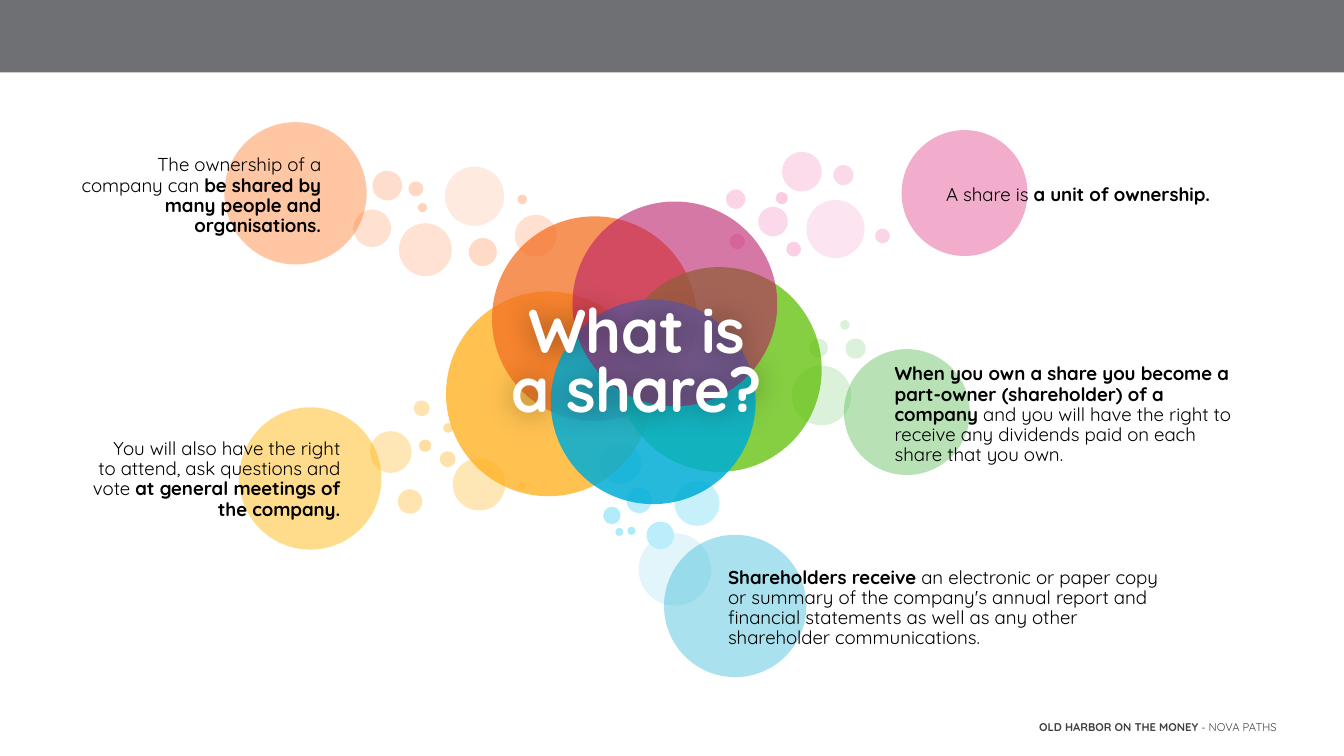
"""Build the "What is a share?" slide with five bubble clusters around a title."""
from lxml import etree
from pptx import Presentation
from pptx.dml.color import RGBColor
from pptx.enum.shapes import MSO_SHAPE
from pptx.enum.text import MSO_ANCHOR, MSO_AUTO_SIZE, PP_ALIGN
from pptx.oxml.ns import qn
from pptx.util import Cm, Pt

OVAL, RECT = MSO_SHAPE.OVAL, MSO_SHAPE.RECTANGLE
TOP, MIDDLE = MSO_ANCHOR.TOP, MSO_ANCHOR.MIDDLE
LEFT, CENTER, RIGHT = PP_ALIGN.LEFT, PP_ALIGN.CENTER, PP_ALIGN.RIGHT
NO_FIT = MSO_AUTO_SIZE.NONE
FONT = "Quicksand"
COLORS = {
    "black": "000000", "white": "FFFFFF", "header": "6F7074", "footer": "404040",
    "yellow": "FFB300", "yellow1": "FFE7B5", "yellow2": "FFE4B0",
    "yellow3": "FFE2AB", "yellow4": "FFDEA1",
    "green": "4FB848", "green1": "DCF1DA",
    "orange": "FF6200", "orange1": "FFEAE0", "orange2": "FFE2D4", "orange3": "FFE0D1",
    "orange4": "FFDDCC", "orange5": "FFDAC7", "orange6": "FFD7C2", "orange7": "FFD2BA",
    "pink": "DE337D", "pink1": "FCE5F0", "pink2": "FCDBEB", "pink3": "FCD9EA",
    "pink4": "FCD4E7", "pink5": "FCCFE4", "pink6": "FCCCE2",
    "blue": "2BB5D6", "blue1": "E1F5FA", "blue2": "C8F0FA", "blue3": "C6F0FA",
    "blue4": "BBEEFA", "blue5": "B2ECFA", "blue6": "ACEBFA",
    "core_yellow": "FFAE17", "core_orange": "F36F21", "core_green": "5CBF00",
    "core_blue": "00ADD6", "core_pink": "B81866",
}


def add_filled(shapes, kind, x, y, w, h, color, alpha=100):
    sp = shapes.add_shape(kind, Cm(x), Cm(y), Cm(w), Cm(h))
    sp.shadow.inherit = False
    sp.line.fill.background()
    sp.fill.solid()
    sp.fill.fore_color.rgb = RGBColor.from_string(COLORS[color])
    if alpha < 100:
        clr = sp.fill._xPr.find(".//" + qn("a:srgbClr"))
        etree.SubElement(clr, qn("a:alpha"), val=str(alpha * 1000))


def format_text(sp, lines, size=10, color="black", align=LEFT, anchor=TOP, spacing=0.9):
    tf = sp.text_frame
    tf.word_wrap = True
    tf.auto_size = NO_FIT
    tf.vertical_anchor = anchor
    for i, runs in enumerate(lines):
        p = tf.add_paragraph() if i else tf.paragraphs[0]
        p.alignment = align
        p.line_spacing = spacing
        p.space_before = Pt(0)
        for text, bold in runs:
            r = p.add_run()
            r.text = text
            r.font.name = FONT
            r.font.size = Pt(size)
            r.font.bold = bold
            r.font.color.rgb = RGBColor.from_string(COLORS[color])


prs = Presentation()
prs.slide_width, prs.slide_height = Cm(25.4), Cm(14.29)
s = prs.slides.add_slide(prs.slide_layouts[5])

footer = s.shapes.add_textbox(Cm(10.72), Cm(13.49), Cm(13.41), Cm(0.51))
footer.text_frame.margin_left = footer.text_frame.margin_right = 0
format_text(footer, [[("OLD HARBOR ON THE MONEY ", True), ("- NOVA PATHS", False)]],
            size=6, color="footer", align=RIGHT, spacing=1.0)
add_filled(s.shapes, RECT, 0, 0, 25.4, 1.37, "header")

clusters = [
    {"bubbles": [
        (6.99, 8.15, 0.79, "yellow1"), (7.52, 9.25, 0.46, "yellow2"),
        (8.31, 8.53, 0.3, "yellow3"), (7.92, 8.31, 0.23, "yellow4"),
        (7.82, 7.57, 0.3, "yellow2"), (8.38, 8, 0.18, "yellow4"),
        (9.8, 9.12, 0.13, "yellow4"), (8.56, 8.66, 0.99, "yellow1")],
     "circle": (4.52, 7.7, 2.69, "yellow", 45),
     "box": (1.5, 8.18, 5.18, 1.04), "align": RIGHT, "anchor": TOP,
     "runs": [("You will also have the right to attend, ask questions and vote ", False),
              ("at general meetings of the company.", True)]},
    {"bubbles": [
        (15.29, 6.4, 0.36, "green1"), (15.88, 6.05, 0.18, "green1"),
        (15.98, 6.4, 0.38, "green1"), (14.96, 6.91, 1.13, "green1")],
     "circle": (15.95, 6.6, 2.38, "green", 40),
     "box": (16.66, 7.09, 6.91, 1.52), "align": LEFT, "anchor": MIDDLE,
     "runs": [("When you own a share you become a part-owner (shareholder) of a company ", True),
              ("and you will have the right to receive any dividends paid on each "
               "share that you own.", False)]},
    {"bubbles": [
        (9.73, 4.06, 0.79, "orange3"), (8.41, 3.15, 1.12, "orange1"),
        (7.54, 4.22, 1, "orange2"), (8.86, 4.5, 0.53, "orange5"),
        (6.68, 3.96, 0.71, "orange3"), (7.04, 3.23, 0.56, "orange4"),
        (7.72, 3.43, 0.28, "orange6"), (7.9, 3.84, 0.17, "orange7"),
        (9.78, 3.68, 0.18, "orange7")],
     "circle": (4.24, 2.31, 2.69, "orange", 36),
     "box": (1.14, 2.82, 5.18, 1.04), "align": RIGHT, "anchor": TOP,
     "runs": [("The ownership of a company can ", False),
              ("be shared by many people and organisations.", True)]},
    {"bubbles": [
        (14.78, 2.87, 0.75, "pink2"), (14.33, 3.91, 0.56, "pink3"),
        (13.79, 4.42, 0.29, "pink5"), (14.66, 3.63, 0.23, "pink6"),
        (13.72, 3.58, 0.37, "pink4"), (15.75, 3.12, 0.38, "pink3"),
        (14.86, 4.57, 0.28, "pink5"), (16.54, 4.32, 0.28, "pink4"),
        (15.24, 3.78, 1.1, "pink1")],
     "circle": (17.04, 2.46, 2.38, "pink", 40),
     "box": (17.63, 3.38, 6.4, 1.04), "align": LEFT, "anchor": TOP,
     "runs": [("A share is ", False), ("a unit of ownership.", True)]},
    {"bubbles": [
        (12.75, 9.09, 0.85, "blue3"), (12.07, 10.08, 1.37, "blue1"),
        (11.33, 8.36, 0.79, "blue2"), (11.84, 9.22, 0.48, "blue4"),
        (12.22, 9.86, 0.52, "blue4"), (11.4, 9.58, 0.33, "blue5"),
        (11.86, 9.96, 0.15, "blue6"), (11.63, 9.98, 0.15, "blue6")],
     "circle": (12.55, 10.11, 2.69, "blue", 40),
     "box": (13.51, 10.74, 8.89, 1.52), "align": LEFT, "anchor": MIDDLE,
     "runs": [("Shareholders receive ", True),
              ("an electronic or paper copy or summary of the company's annual report and "
               "financial statements as well as any other shareholder communications.", False)]},
]
for cluster in clusters:
    group = s.shapes.add_group_shape()
    for x, y, d, color in cluster["bubbles"]:
        add_filled(group.shapes, OVAL, x, y, d, d, color)
    x, y, d, color, alpha = cluster["circle"]
    add_filled(group.shapes, OVAL, x, y, d, d, color, alpha)
    sp = group.shapes.add_textbox(*[Cm(v) for v in cluster["box"]])
    format_text(sp, [cluster["runs"]], align=cluster["align"], anchor=cluster["anchor"])

for x, y, color, alpha in [
    (8.43, 5.51, "core_yellow", 75), (9.3, 4.09, "core_orange", 75),
    (11.66, 5.05, "core_green", 74), (10.41, 5.66, "core_blue", 85),
    (10.82, 3.81, "core_pink", 58),
]:
    add_filled(s.shapes, OVAL, x, y, 3.87, 3.87, color, alpha)

title = s.shapes.title
title.left, title.top, title.width, title.height = Cm(7.14), Cm(5.66), Cm(9.78), Cm(1.32)
format_text(title, [[("What is", True)], [("a share?", True)]],
            size=33, color="white", align=CENTER, spacing=0.8)
for p in title.text_frame.paragraphs:
    p.runs[0].font._element.set("spc", "-20")
effects = etree.SubElement(title._element.spPr, qn("a:effectLst"))
shadow = etree.SubElement(effects, qn("a:outerShdw"), blurRad="190500", algn="ctr", rotWithShape="0")
clr = etree.SubElement(shadow, qn("a:srgbClr"), val=COLORS["black"])
etree.SubElement(clr, qn("a:alpha"), val="40000")
s.shapes._spTree.append(title._element)

prs.save("out.pptx")
